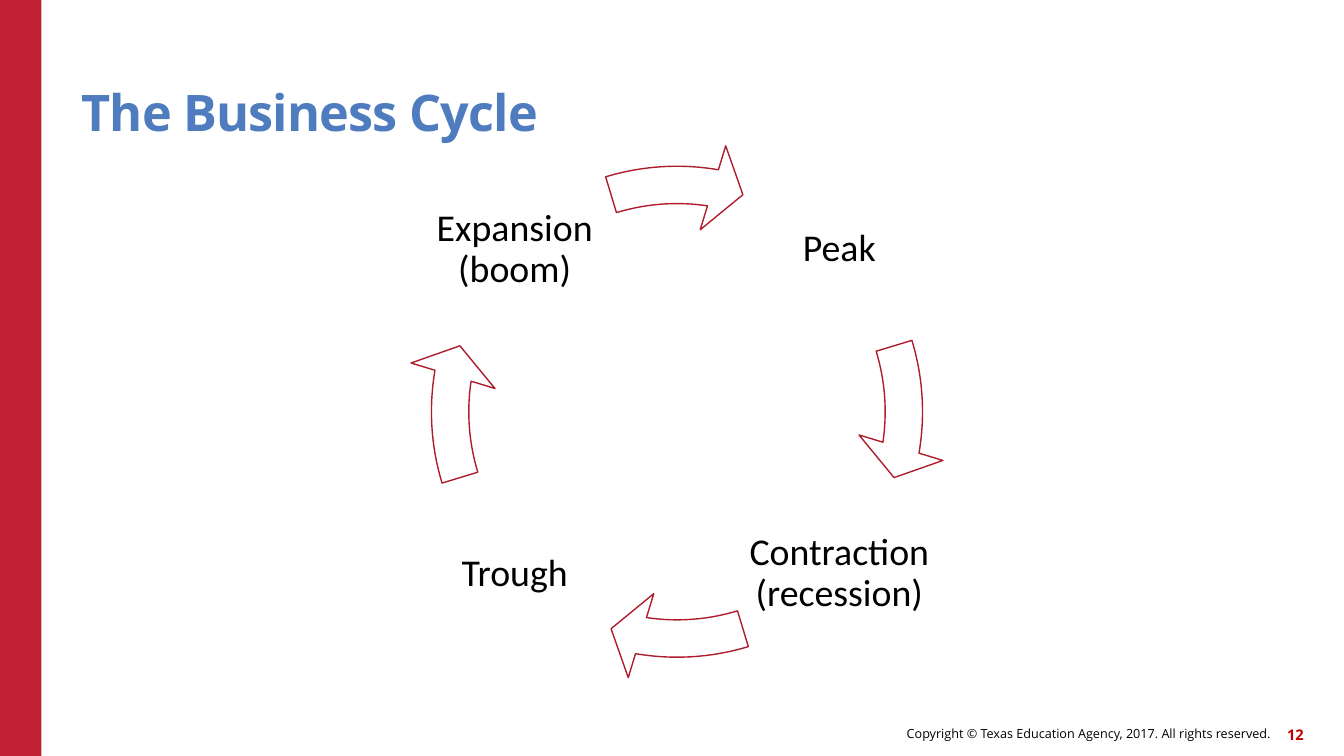
from pptx import Presentation
from pptx.dml.color import RGBColor
from pptx.enum.shapes import MSO_SHAPE
from pptx.enum.text import MSO_ANCHOR, PP_ALIGN
from pptx.util import Inches, Pt

RECT, ARROW = MSO_SHAPE.RECTANGLE, MSO_SHAPE.CIRCULAR_ARROW
MIDDLE, BOTTOM = MSO_ANCHOR.MIDDLE, MSO_ANCHOR.BOTTOM
LEFT, CENTER, RIGHT = PP_ALIGN.LEFT, PP_ALIGN.CENTER, PP_ALIGN.RIGHT

RED = RGBColor(0xC0, 0x20, 0x33)
EDGE = RGBColor(0xAE, 0x1D, 0x2E)
NUMBER = RGBColor(0xC0, 0x00, 0x00)
BLUE = RGBColor(0x4E, 0x7C, 0xBE)
BLACK = RGBColor(0, 0, 0)
WHITE = RGBColor(0xFF, 0xFF, 0xFF)

# Clockwise from the top right: text, column side, row side
PHASES = [
    ("Peak", 1, -1),
    ("Contraction (recession)", 1, 1),
    ("Trough", -1, 1),
    ("Expansion (boom)", -1, -1),
]
# Circular arrow angles are in 60000ths of a degree, scaled by 100000
QUARTER, TURN = 54, 216


def add_text(slide, box, text, size, color, font="Open Sans", bold=False,
             align=LEFT, anchor=MIDDLE, inset=0, spacing=None):
    frame = slide.shapes.add_textbox(*map(Inches, box)).text_frame
    frame.word_wrap = True
    frame.vertical_anchor = anchor
    frame.margin_left = frame.margin_right = Inches(inset)
    frame.margin_top = frame.margin_bottom = Inches(inset)
    para = frame.paragraphs[0]
    para.text = text
    para.alignment = align
    if spacing:
        para.line_spacing = spacing
    para.font.name = font
    para.font.size = Pt(size)
    para.font.bold = bold
    para.font.color.rgb = color
    return para


def add_preset(slide, kind, box, fill):
    shape = slide.shapes.add_shape(kind, *map(Inches, box))
    shape.shadow.inherit = False
    shape.fill.solid()
    shape.fill.fore_color.rgb = fill
    return shape


def add_frame(slide, width, height):
    # Side band
    band = add_preset(slide, RECT, (0, 0, 0.41, height), RED)
    band.line.fill.background()
    # Footer and page number
    add_text(slide, (width - 7.19, height - 0.38, 6.46, 0.32),
             "Copyright © Texas Education Agency, 2017. All rights reserved.",
             9, BLACK, align=RIGHT)
    add_text(slide, (width - 0.82, height - 0.37, 0.42, 0.32), "12", 10.5,
             NUMBER, bold=True, align=RIGHT)


def add_title(slide, box, text):
    para = add_text(slide, box, text, 36, BLUE, bold=True, anchor=BOTTOM,
                    spacing=0.9)
    para.runs[0]._r.get_or_add_rPr().set("spc", "-60")


def add_cycle(slide, left, top, size):
    mid_x, mid_y = left + size / 2, top + size / 2
    side, reach = 1.9, 1.61
    for step, (text, col, row) in enumerate(PHASES):
        # Phase label
        box = (mid_x + col * reach - side / 2, mid_y + row * reach - side / 2,
               side, side)
        add_text(slide, box, text, 27, BLACK, font="Calibri", align=CENTER,
                 inset=0.04, spacing=0.9)
        # Arrow to the next phase
        arrow = add_preset(slide, ARROW, (left, top, size, size), WHITE)
        arrow.line.color.rgb = EDGE
        arrow.line.width = Pt(1)
        turn = step * QUARTER
        angles = (0.069, 4.657, 5.478 + turn, (205.864 + turn) % TURN, 0.081)
        for index, value in enumerate(angles):
            arrow.adjustments[index] = value


def main():
    width, height = 13.33, 7.5
    deck = Presentation()
    deck.slide_width, deck.slide_height = Inches(width), Inches(height)
    slide = deck.slides.add_slide(deck.slide_layouts[6])
    add_frame(slide, width, height)
    add_title(slide, (0.81, 0.45, 11, 0.96), "The Business Cycle")
    add_cycle(slide, 4.03, 1.4, 5.37)
    deck.save("out.pptx")


if __name__ == "__main__":
    main()
